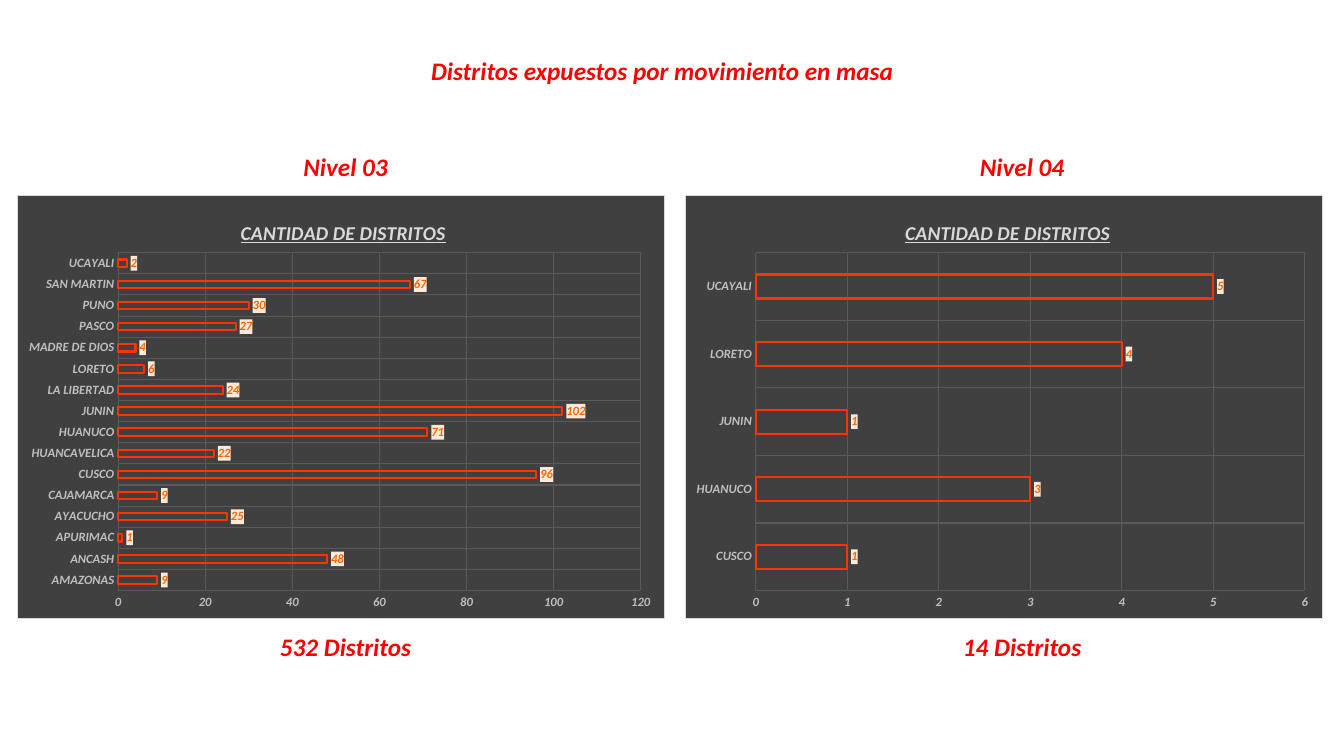
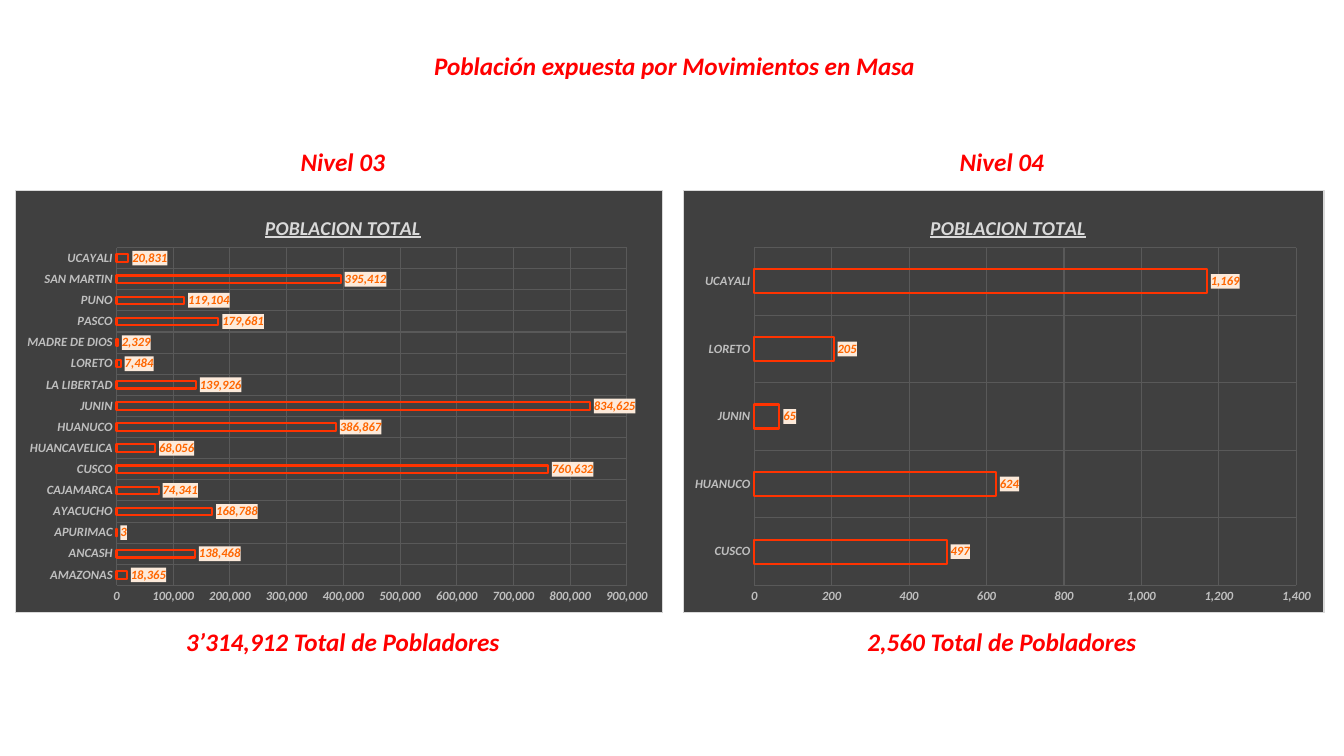
from pptx import Presentation
from pptx.chart.data import CategoryChartData
from pptx.dml.color import RGBColor
from pptx.enum.chart import XL_CHART_TYPE, XL_LABEL_POSITION, XL_TICK_MARK
from pptx.enum.text import MSO_AUTO_SIZE, PP_ALIGN
from pptx.oxml import parse_xml
from pptx.oxml.ns import nsdecls
from pptx.util import Cm, Pt

FONT = "Calibri"
RED, ORANGE, ORANGE_RED, CREAM = "FF0000", "FF6600", "FF3300", "FDEADA"
DARK, GRID, TICK, PALE = "404040", "595959", "BFBFBF", "D9D9D9"

REGIONS = ["AMAZONAS", "ANCASH", "APURIMAC", "AYACUCHO", "CAJAMARCA", "CUSCO",
           "HUANCAVELICA", "HUANUCO", "JUNIN", "LA LIBERTAD", "LORETO",
           "MADRE DE DIOS", "PASCO", "PUNO", "SAN MARTIN", "UCAYALI"]
TOP_REGIONS = ["CUSCO", "HUANUCO", "JUNIN", "LORETO", "UCAYALI"]

# Panels: level, centre of texts, total, its width, chart left and width,
# plot left and width (share of the chart), categories, values. Lengths in cm.
SLIDES = [
    dict(title="Distritos expuestos por movimiento en masa", top=1.27,
         centre=16.69, width=12.3, heading="CANTIDAD DE DISTRITOS", heading_x=0.34,
         panels=[
             ("Nivel 03", 8.71, "532 Distritos", 4.24, 0.42, 16.33, 0.156, 0.808, REGIONS,
              [9, 48, 1, 25, 9, 96, 22, 71, 102, 24, 6, 4, 27, 30, 67, 2]),
             ("Nivel 04", 25.76, "14 Distritos", 3.86, 17.25, 16.08, 0.111, 0.862,
              TOP_REGIONS, [1, 3, 1, 4, 5])]),
    dict(title="Población expuesta por Movimientos en Masa", top=1.14,
         centre=17, width=12.78, heading="POBLACION TOTAL", heading_x=0.38,
         panels=[
             ("Nivel 03", 8.64, "3’314,912 Total de Pobladores", 8.5, 0.38, 16.33,
              0.156, 0.789, REGIONS,
              [18365, 138468, 3, 168788, 74341, 760632, 68056, 386867, 834625,
               139926, 7484, 2329, 179681, 119104, 395412, 20831]),
             ("Nivel 04", 25.25, "2,560 Total de Pobladores", 8.5, 17.2, 16.18,
              0.111, 0.846, TOP_REGIONS, [497, 624, 65, 205, 1169])]),
]


def rgb(color):
    return RGBColor.from_string(color)


def set_font(font, size, color):
    font.name, font.size, font.bold, font.italic = FONT, Pt(size), True, True
    font.color.rgb = rgb(color)


def set_layout(element, index, inner=False, **shares):
    """Place a chart part by shares of the chart's size."""
    for old in element.xpath("c:layout"):
        element.remove(old)
    target = '<c:layoutTarget val="inner"/>' if inner else ""
    modes = "".join(f'<c:{k}Mode val="edge"/>' for k in shares if k in "xy")
    values = "".join(f'<c:{k} val="{v}"/>' for k, v in shares.items())
    element.insert(index, parse_xml(
        f'<c:layout {nsdecls("c")}><c:manualLayout>{target}{modes}{values}'
        '</c:manualLayout></c:layout>'))


def box_format(fill, line=None):
    """Return the shape properties of a filled chart part."""
    def solid(color):
        return f'<a:solidFill><a:srgbClr val="{color}"/></a:solidFill>'
    border = solid(line) if line else "<a:noFill/>"
    return parse_xml(f'<c:spPr {nsdecls("c", "a")}>{solid(fill)}'
                     f'<a:ln w="9525">{border}</a:ln></c:spPr>')


class Deck:
    def __init__(self):
        self.prs = Presentation()
        self.prs.slide_width, self.prs.slide_height = Cm(33.87), Cm(19.05)
        self.s = None

    def new_slide(self):
        self.s = self.prs.slides.add_slide(self.prs.slide_layouts[6])

    def text(self, text, centre, top, width, wrap=True):
        sp = self.s.shapes.add_textbox(Cm(centre - width / 2), Cm(top), Cm(width), Cm(1.02))
        tf = sp.text_frame
        tf.text = text
        tf.word_wrap = wrap
        tf.auto_size = MSO_AUTO_SIZE.SHAPE_TO_FIT_TEXT
        p = tf.paragraphs[0]
        p.alignment = PP_ALIGN.CENTER
        set_font(p.runs[0].font, 18, RED)

    def bar_chart(self, heading, heading_x, left, top, width, plot_x, plot_w, cats, vals):
        data = CategoryChartData(number_format="#,##0")
        data.categories = cats
        data.add_series("Series 1", vals)
        chart = self.s.shapes.add_chart(XL_CHART_TYPE.BAR_CLUSTERED, Cm(left), Cm(top),
                                        Cm(width), Cm(10.67), data).chart
        chart.has_legend = False
        chart.font.name, chart.font.size = FONT, Pt(10)
        chart.element.xpath("c:txPr")[0].addprevious(box_format(DARK, PALE))

        title = chart.chart_title
        title.text_frame.text = heading
        font = title.text_frame.paragraphs[0].runs[0].font
        set_font(font, 14, PALE)
        font.underline = True
        set_layout(title.element if hasattr(title, "element") else title._element, 1,
                   x=heading_x, y=0.047)
        set_layout(chart.element.xpath("c:chart/c:plotArea")[0], 0, inner=True,
                   x=plot_x, y=0.135, w=plot_w, h=0.8)

        for axis in (chart.category_axis, chart.value_axis):
            axis.major_tick_mark = axis.minor_tick_mark = XL_TICK_MARK.NONE
            axis.format.line.fill.background()
            axis.has_major_gridlines = True
            grid = axis.major_gridlines.format.line
            grid.width = Pt(0.75)
            grid.color.rgb = rgb(GRID)
            set_font(axis.tick_labels.font, 9, TICK)
        numbers = chart.value_axis.tick_labels
        numbers.number_format, numbers.number_format_is_linked = "#,##0", False

        plot = chart.plots[0]
        plot.gap_width, plot.overlap, plot.vary_by_categories = 182, -50, False
        series = plot.series[0]
        series.invert_if_negative = False
        series.format.fill.background()
        series.format.line.width = Pt(1.5)
        series.format.line.color.rgb = rgb(ORANGE_RED)
        labels = series.data_labels
        labels.show_value = True
        labels.position = XL_LABEL_POSITION.OUTSIDE_END
        labels.number_format, labels.number_format_is_linked = "#,##0", False
        set_font(labels.font, 9, ORANGE)
        chart.element.xpath(".//c:dLbls/c:txPr")[0].addprevious(box_format(CREAM))


def main():
    deck = Deck()
    for page in SLIDES:
        deck.new_slide()
        top = page["top"]
        deck.text(page["title"], page["centre"], top, page["width"], wrap=False)
        for level, centre, total, total_w, left, width, *plot in page["panels"]:
            deck.text(level, centre, top + 2.41, 2.75)
            deck.text(total, centre, top + 14.51, total_w)
            deck.bar_chart(page["heading"], page["heading_x"], left, top + 3.65, width, *plot)
    deck.prs.save("out.pptx")


if __name__ == "__main__":
    main()
